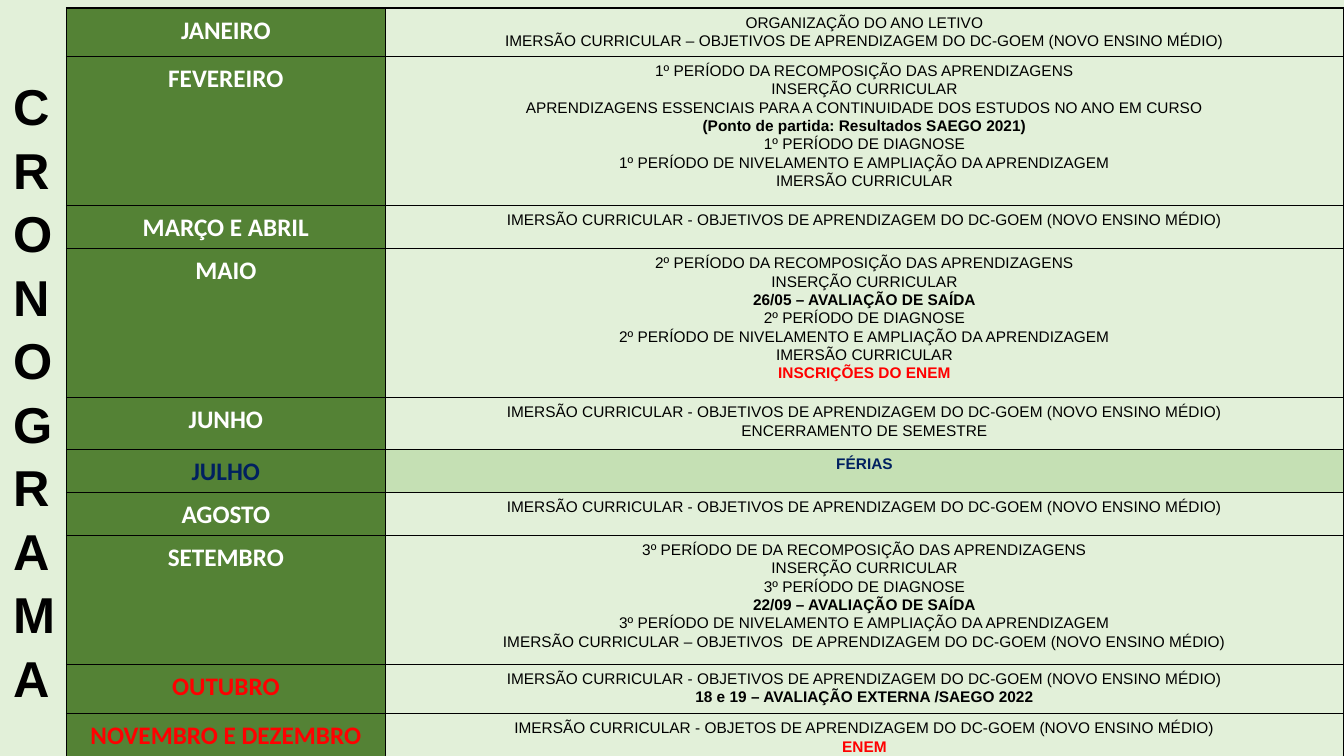
from pptx import Presentation
from pptx.dml.color import RGBColor
from pptx.enum.text import MSO_AUTO_SIZE, PP_ALIGN
from pptx.oxml.xmlchemy import OxmlElement
from pptx.util import Inches, Pt

CENTER = PP_ALIGN.CENTER
NO_AUTOFIT = MSO_AUTO_SIZE.NONE

COLORS = {
    "page": "E2F0D9", "month": "548235", "holiday": "C5E0B4",
    "black": "000000", "white": "FFFFFF", "navy": "002060", "red": "FF0000",
}
TITLE = "CRONOGRAMA"
IMMERSION = "IMERSÃO CURRICULAR - OBJETIVOS DE APRENDIZAGEM DO DC-GOEM (NOVO ENSINO MÉDIO)"

# Month, month colour, row height, activities; a tuple is a bold line and its colour
SCHEDULE = [
    ("JANEIRO", "white", 0.48, [
        "ORGANIZAÇÃO DO ANO LETIVO",
        "IMERSÃO CURRICULAR – OBJETIVOS DE APRENDIZAGEM DO DC-GOEM (NOVO ENSINO MÉDIO)"]),
    ("FEVEREIRO", "white", 1.48, [
        "1º PERÍODO DA RECOMPOSIÇÃO DAS APRENDIZAGENS",
        "INSERÇÃO CURRICULAR",
        "APRENDIZAGENS ESSENCIAIS PARA A CONTINUIDADE DOS ESTUDOS NO ANO EM CURSO",
        ("(Ponto de partida: Resultados SAEGO 2021)", "black"),
        "1º PERÍODO DE DIAGNOSE",
        "1º PERÍODO DE NIVELAMENTO E AMPLIAÇÃO DA APRENDIZAGEM",
        "IMERSÃO CURRICULAR"]),
    ("MARÇO E ABRIL", "white", 0.42, [IMMERSION]),
    ("MAIO", "white", 1.48, [
        "2º PERÍODO DA RECOMPOSIÇÃO DAS APRENDIZAGENS",
        "INSERÇÃO CURRICULAR",
        ("26/05 – AVALIAÇÃO DE SAÍDA", "black"),
        "2º PERÍODO DE DIAGNOSE",
        "2º PERÍODO DE NIVELAMENTO E AMPLIAÇÃO DA APRENDIZAGEM",
        "IMERSÃO CURRICULAR",
        ("INSCRIÇÕES DO ENEM", "red")]),
    ("JUNHO", "white", 0.51, [IMMERSION, "ENCERRAMENTO DE SEMESTRE"]),
    ("JULHO", "navy", 0.42, [("FÉRIAS", "navy")]),
    ("AGOSTO", "white", 0.42, [IMMERSION]),
    ("SETEMBRO", "white", 1.28, [
        "3º PERÍODO DE DA RECOMPOSIÇÃO DAS APRENDIZAGENS",
        "INSERÇÃO CURRICULAR",
        "3º PERÍODO DE DIAGNOSE",
        ("22/09 – AVALIAÇÃO DE SAÍDA", "black"),
        "3º PERÍODO DE NIVELAMENTO E AMPLIAÇÃO DA APRENDIZAGEM",
        "IMERSÃO CURRICULAR – OBJETIVOS  DE APRENDIZAGEM DO DC-GOEM (NOVO ENSINO MÉDIO)"]),
    ("OUTUBRO", "red", 0.49, [
        IMMERSION, ("18 e 19 – AVALIAÇÃO EXTERNA /SAEGO 2022", "black")]),
    ("NOVEMBRO E DEZEMBRO", "red", 0.46, [
        "IMERSÃO CURRICULAR - OBJETOS DE APRENDIZAGEM DO DC-GOEM (NOVO ENSINO MÉDIO)",
        ("ENEM", "red")]),
]
COLUMN_WIDTHS = (3.16, 9.51)
HOLIDAY_MONTH = "JULHO"


def rgb(name):
    return RGBColor.from_string(COLORS[name])


def style(p, font, size, color, bold, spacing):
    p.line_spacing = spacing
    for r in p.runs:
        r.font.name, r.font.size, r.font.bold = font, Pt(size), bold
        r.font.color.rgb = rgb(color)


def add_borders(cell):
    tcPr = cell._tc.get_or_add_tcPr()
    for i, side in enumerate(("lnL", "lnR", "lnT", "lnB")):
        ln = OxmlElement(f"a:{side}")
        ln.set("w", str(Pt(0.96)))
        fill = OxmlElement("a:solidFill")
        color = OxmlElement("a:srgbClr")
        color.set("val", COLORS["black"])
        fill.append(color)
        ln.append(fill)
        tcPr.insert(i, ln)


def fill_cell(cell, lines, font, size, fill):
    cell.margin_left = cell.margin_right = Inches(0.05)
    cell.margin_top = cell.margin_bottom = Inches(0.05)
    if fill:
        cell.fill.solid()
        cell.fill.fore_color.rgb = rgb(fill)
    else:
        cell.fill.background()
    add_borders(cell)
    tf = cell.text_frame
    tf.text = "\n".join(text for text, _, _ in lines)
    for p, (_, color, bold) in zip(tf.paragraphs, lines):
        p.alignment = CENTER
        style(p, font, size, color, bold, 1.07)


prs = Presentation()
prs.slide_width, prs.slide_height = Inches(13.33), Inches(7.5)
s = prs.slides.add_slide(prs.slide_layouts[6])
s.background.fill.solid()
s.background.fill.fore_color.rgb = rgb("page")

# Schedule table
height = sum(row[2] for row in SCHEDULE)
table = s.shapes.add_table(len(SCHEDULE), 2, Inches(0.66), Inches(0.08),
                           Inches(sum(COLUMN_WIDTHS)), Inches(height)).table
table.first_row = table.horz_banding = False
for column, width in zip(table.columns, COLUMN_WIDTHS):
    column.width = Inches(width)
for i, (month, color, row_height, activities) in enumerate(SCHEDULE):
    table.rows[i].height = Inches(row_height)
    lines = [(a, "black", False) if isinstance(a, str) else (*a, True) for a in activities]
    fill_cell(table.cell(i, 0), [(month, color, True)], "Calibri", 18, "month")
    fill_cell(table.cell(i, 1), lines, "Arial", 11,
              "holiday" if month == HOLIDAY_MONTH else None)

# Title in a box so narrow that each letter takes its own line
tf = s.shapes.add_textbox(Inches(0.04), Inches(0.67), Inches(0.34), Inches(6.16)).text_frame
tf.word_wrap = True
tf.auto_size = NO_AUTOFIT
tf.text = TITLE
style(tf.paragraphs[0], "Arial", 36, "black", True, 1.05)

prs.save("out.pptx")
